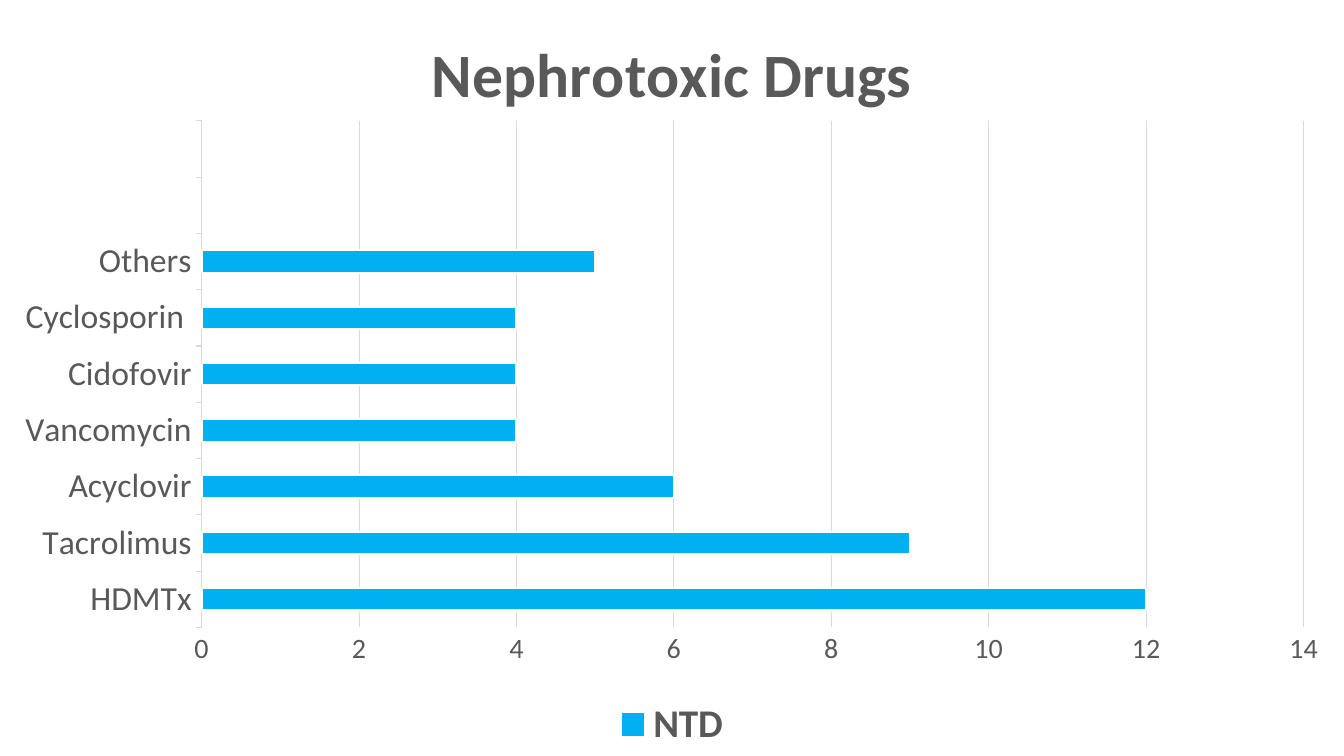
from typing import NamedTuple, Optional

from lxml import etree
from pptx import Presentation
from pptx.chart.data import CategoryChartData
from pptx.dml.color import RGBColor
from pptx.enum.chart import XL_CHART_TYPE, XL_LEGEND_POSITION, XL_TICK_MARK
from pptx.oxml.ns import qn
from pptx.util import Inches, Pt

BAR_CLUSTERED = XL_CHART_TYPE.BAR_CLUSTERED
LEGEND_BOTTOM = XL_LEGEND_POSITION.BOTTOM
TICK_OUTSIDE = XL_TICK_MARK.OUTSIDE
TICK_NONE = XL_TICK_MARK.NONE

COLORS = {"text": "595959", "rule": "D9D9D9", "bar": "00B0F0", "bar_edge": "FFFFFF"}
FONT_NAME = "Calibri"
PAGE_WIDTH, PAGE_HEIGHT = Inches(13.33), Inches(7.5)
PLOT_AREA = {"x": 0.15, "y": 0.16, "w": 0.82, "h": 0.67}


class Drug(NamedTuple):
    name: str
    count: Optional[int]


DRUGS = [
    Drug("HDMTx", 12),
    Drug("Tacrolimus", 9),
    Drug("Acyclovir", 6),
    Drug("Vancomycin", 4),
    Drug("Cidofovir", 4),
    Drug("Cyclosporin ", 4),
    Drug("Others", 5),
    Drug("", None),
    Drug("", None),
]


def color(name: str) -> RGBColor:
    return RGBColor.from_string(COLORS[name])


def format_font(font, size: float, bold: bool = False) -> None:
    font.name = FONT_NAME
    font.size = Pt(size)
    font.bold = bold
    font.color.rgb = color("text")


def format_line(line, color_name: str, width: float) -> None:
    line.color.rgb = color(color_name)
    line.width = Pt(width)


def place_plot_area(chart) -> None:
    """Fix the inner plot area as fractions of the chart."""
    plot_area = chart.element.find(".//" + qn("c:plotArea"))
    for old_layout in plot_area.findall(qn("c:layout")):
        plot_area.remove(old_layout)
    layout = etree.Element(qn("c:layout"))
    manual = etree.SubElement(layout, qn("c:manualLayout"))
    settings = {"layoutTarget": "inner", "xMode": "edge", "yMode": "edge", **PLOT_AREA}
    for tag, value in settings.items():
        etree.SubElement(manual, qn(f"c:{tag}")).set("val", str(value))
    plot_area.insert(0, layout)


def format_axes(chart) -> None:
    drug_axis = chart.category_axis
    drug_axis.major_tick_mark = TICK_OUTSIDE
    drug_axis.has_major_gridlines = False
    format_font(drug_axis.tick_labels.font, 24)
    format_line(drug_axis.format.line, "rule", 0.75)

    count_axis = chart.value_axis
    count_axis.minimum_scale, count_axis.maximum_scale = 0, 14
    count_axis.major_unit = 2
    count_axis.major_tick_mark = TICK_NONE
    count_axis.has_major_gridlines = True
    format_font(count_axis.tick_labels.font, 20)
    count_axis.format.line.fill.background()
    format_line(count_axis.major_gridlines.format.line, "rule", 0.75)


def add_drug_chart(page) -> None:
    data = CategoryChartData()
    data.categories = [drug.name for drug in DRUGS]
    data.add_series("NTD", [drug.count for drug in DRUGS])
    chart = page.shapes.add_chart(
        BAR_CLUSTERED, 0, 0, PAGE_WIDTH, PAGE_HEIGHT, data
    ).chart
    format_font(chart.font, 10)

    chart.has_title = True
    para = chart.chart_title.text_frame.paragraphs[0]
    span = para.add_run()
    span.text = "Nephrotoxic Drugs"
    format_font(span.font, 44, bold=True)

    chart.has_legend = True
    chart.legend.position = LEGEND_BOTTOM
    chart.legend.include_in_layout = False
    format_font(chart.legend.font, 28, bold=True)

    plot = chart.plots[0]
    plot.gap_width = 150
    plot.vary_by_categories = False
    bars = plot.series[0]
    bars.format.fill.solid()
    bars.format.fill.fore_color.rgb = color("bar")
    format_line(bars.format.line, "bar_edge", 1.5)

    format_axes(chart)
    place_plot_area(chart)


def main() -> None:
    deck = Presentation()
    deck.slide_width, deck.slide_height = PAGE_WIDTH, PAGE_HEIGHT
    blank_layout = deck.slide_layouts[6]
    add_drug_chart(deck.slides.add_slide(blank_layout))
    deck.save("out.pptx")


if __name__ == "__main__":
    main()
